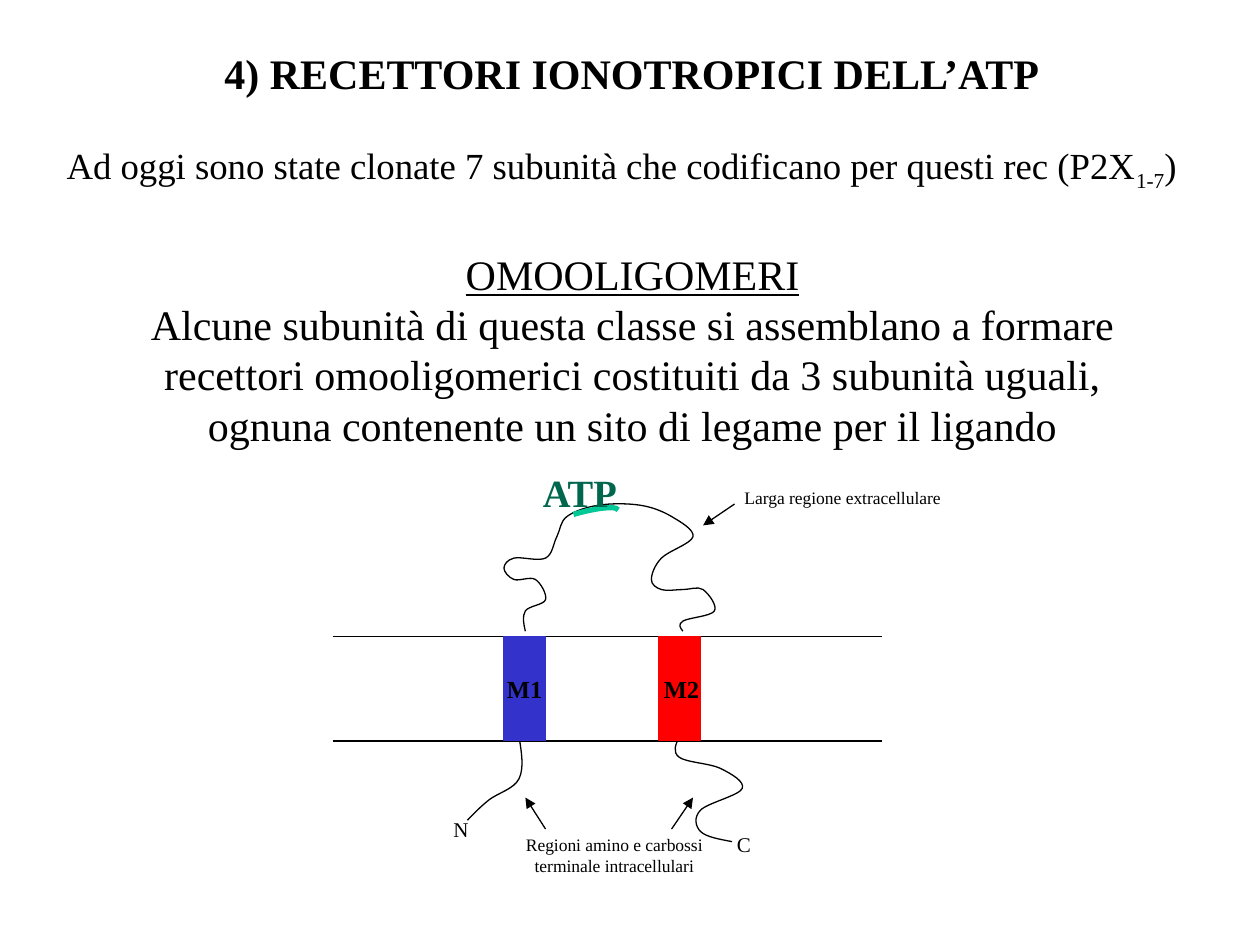
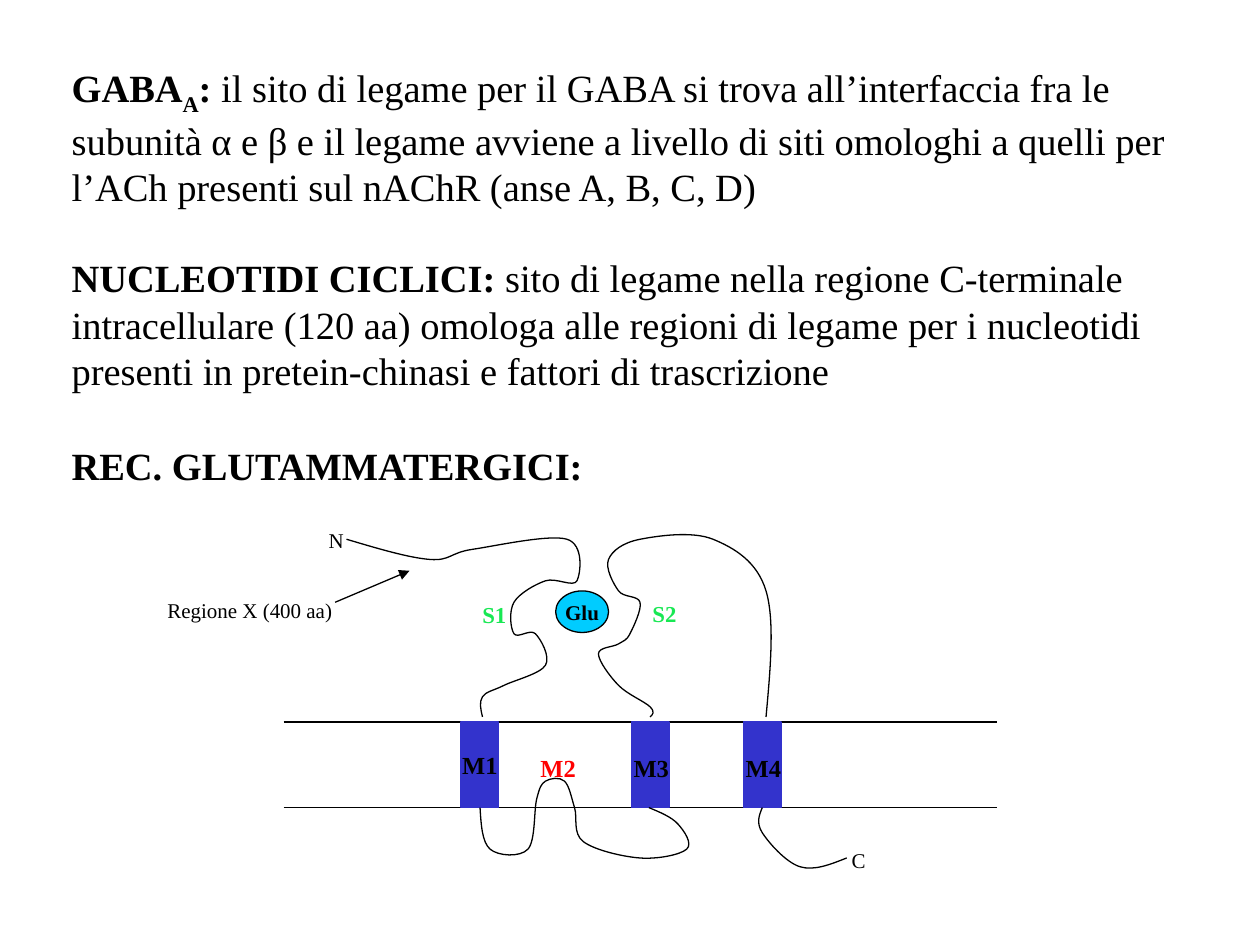
from dataclasses import dataclass

from lxml.etree import SubElement
from pptx import Presentation
from pptx.dml.color import RGBColor as Rgb
from pptx.enum.shapes import MSO_CONNECTOR as Link, MSO_SHAPE as Kind
from pptx.enum.text import MSO_ANCHOR as Anchor, MSO_AUTO_SIZE as Fit, PP_ALIGN as Align
from pptx.oxml.ns import qn
from pptx.util import Inches, Pt


@dataclass(frozen=True)
class Theme:
    font: str = "Times New Roman"
    ink: str = "000000"
    blue: str = "3333CC"
    red: str = "FF0000"
    cyan: str = "00CCFF"
    lime: str = "18E853"
    pine: str = "00664D"
    mint: str = "00C896"
    head: int = 24
    body: int = 22
    lead: int = 21
    helix: int = 14
    site: int = 13
    mark: int = 12
    note: int = 10
    thin: float = 0.75
    thick: float = 3


T = Theme()


# Shared text and line styling
def style(run, size, color=T.ink, bold=False, under=False, sub=False):
    font = run.font
    font.name, font.size, font.bold = T.font, Pt(size), bold
    font.underline = under
    font.color.rgb = Rgb.from_string(color)
    if sub:
        run._r.get_or_add_rPr().set("baseline", "-25000")


def write(frame, text, size, color=T.ink, bold=False, align=Align.LEFT, wrap=False):
    frame.text = text
    frame.word_wrap = wrap
    for para in frame.paragraphs:
        para.alignment = align
        for run in para.runs:
            style(run, size, color, bold)


def add_runs(para, parts, size):
    for text, look in parts:
        run = para.add_run()
        run.text = text
        style(run, size, **look)


def stroke(shape, color=T.ink, width=T.thin):
    shape.line.color.rgb = Rgb.from_string(color)
    shape.line.width = Pt(width)


def place(shape, x, y, w, h):
    shape.left, shape.top = Inches(x), Inches(y)
    shape.width, shape.height = Inches(w), Inches(h)


def bezier(knots):
    """Control and end points of a smooth curve through the knots."""
    last = len(knots) - 1
    slope = [tuple((b - a) / 6 for a, b in zip(knots[i - 1], knots[i + 1]))
             for i in range(1, last)]
    points = []
    for i in range(last):
        (ax, ay), (bx, by) = knots[i], knots[i + 1]
        if i > 0:
            out = ax + slope[i - 1][0], ay + slope[i - 1][1]
        if i + 1 < last:
            into = bx - slope[i][0], by - slope[i][1]
        if i == 0:
            out = (ax + into[0]) / 2, (ay + into[1]) / 2
        if i + 1 == last:
            into = (out[0] + bx) / 2, (out[1] + by) / 2
        points += [out, into, (bx, by)]
    return points


class Pane:
    """Draws parts relative to the corner of its box."""

    def __init__(self, slide, x=0, y=0):
        self.shapes, self.x, self.y = slide.shapes, x, y

    def spot(self, x, y):
        return Inches(self.x + x), Inches(self.y + y)

    def label(self, text, x, y, w, h, size, **look):
        box = self.shapes.add_textbox(*self.spot(x, y), Inches(w), Inches(h))
        write(box.text_frame, text, size, **look)
        box.text_frame.auto_size = Fit.SHAPE_TO_FIT_TEXT
        return box

    def shape(self, kind, x, y, w, h, fill=None, line=T.ink, width=T.thin):
        item = self.shapes.add_shape(kind, *self.spot(x, y), Inches(w), Inches(h))
        item.shadow.inherit = False
        stroke(item, line, width)
        if fill:
            item.fill.solid()
            item.fill.fore_color.rgb = Rgb.from_string(fill)
        else:
            item.fill.background()
        return item

    def badge(self, item, text, size):
        write(item.text_frame, text, size, bold=True, align=Align.CENTER)
        item.text_frame.vertical_anchor = Anchor.MIDDLE

    def line(self, start, end, arrow=False):
        link = self.shapes.add_connector(Link.STRAIGHT, *self.spot(*start), *self.spot(*end))
        stroke(link)
        if arrow:
            SubElement(link.line._get_or_add_ln(), qn("a:tailEnd"), type="triangle")
        SubElement(link._element.spPr, qn("a:effectLst"))

    def curve(self, *knots):
        pen = self.shapes.build_freeform(*self.spot(*knots[0]))
        pen.add_line_segments([self.spot(*p) for p in bezier(knots)], close=False)
        item = pen.convert_to_shape()
        item.shadow.inherit = False
        item.fill.background()
        stroke(item)
        # Turn each three points into one cubic segment
        steps = item._element.findall(".//" + qn("a:lnTo"))
        for i in range(0, len(steps), 3):
            cubic = SubElement(steps[i].getparent(), qn("a:cubicBezTo"))
            for step in steps[i:i + 3]:
                cubic.append(step[0])
                step.getparent().remove(step)

    def bilayer(self, left, right, top, depth):
        for y in (top, top + depth):
            self.line((left, y), (right, y))


# Slide 1: heading and text
def atp_text(slide):
    title = slide.shapes.title
    place(title, 1.65, 0.33, 6.73, 0.5)
    write(title.text_frame, "4) RECETTORI IONOTROPICI DELL’ATP", T.head,
          bold=True, align=Align.CENTER)
    title.text_frame.vertical_anchor = Anchor.TOP
    title.text_frame.auto_size = Fit.SHAPE_TO_FIT_TEXT

    pane = Pane(slide)
    lead = pane.label("", 0.43, 1.08, 9.14, 0.45, T.lead, wrap=True)
    add_runs(lead.text_frame.paragraphs[0], [
        ("Ad oggi sono state clonate 7 subunità che codificano per questi rec (P2X", {}),
        ("1-7", {"sub": True}), (")", {})], T.lead)

    body = pane.label(
        "OMOOLIGOMERI\n"
        "Alcune subunità di questa classe si assemblano a formare\n"
        "recettori omooligomerici costituiti da 3 subunità uguali,\n"
        "ognuna contenente un sito di legame per il ligando",
        1.06, 1.92, 7.92, 1.72, T.head, align=Align.CENTER)
    body.text_frame.paragraphs[0].runs[0].font.underline = True


# Slide 1: receptor with two helices
def atp_map(slide, x, y):
    pane = Pane(slide, x, y)
    top, depth = 2.05, 0.83
    # Intracellular tails
    pane.curve((3.39, 2.85), (3.39, 3.01), (3.72, 3.1), (3.89, 3.26),
               (3.56, 3.43), (3.56, 3.6), (3.81, 3.68))
    pane.curve((2.12, 2.85), (2.12, 3.18), (1.88, 3.35), (1.71, 3.51))
    # Membrane and helices
    pane.bilayer(0.64, 5, top, depth)
    first = pane.shape(Kind.RECTANGLE, 2, top, 0.33, depth, T.blue, T.blue)
    pane.badge(first, "M1", T.helix)
    pane.shape(Kind.RECTANGLE, 3.23, top, 0.33, depth, T.red, T.red)
    pane.label("M2", 3.17, 2.3, 0.48, 0.33, T.helix, bold=True)
    pane.label("N", 1.5, 3.43, 0.32, 0.3, T.mark)
    pane.label("C", 3.75, 3.55, 0.31, 0.3, T.mark)
    # Extracellular loop
    pane.curve((2.17, 2.01), (2.17, 1.85), (2.33, 1.76), (2.25, 1.6), (2.08, 1.6),
               (2, 1.51), (2.08, 1.43), (2.33, 1.43), (2.42, 1.26), (2.5, 1.1),
               (2.75, 1.01), (3.08, 1.01), (3.33, 1.1), (3.5, 1.26), (3.25, 1.43),
               (3.17, 1.6), (3.25, 1.68), (3.42, 1.68), (3.58, 1.68), (3.67, 1.85),
               (3.42, 1.93), (3.42, 2.01))
    # Notes with arrows
    pane.line((3.83, 1), (3.58, 1.17), arrow=True)
    pane.label("Larga regione extracellulare", 3.81, 0.82, 1.78, 0.27, T.note)
    for start, end in ((2.33, 2.17), (3.33, 3.5)):
        pane.line((start, 3.58), (end, 3.33), arrow=True)
    pane.label("Regioni amino e carbossi\nterminale intracellulari",
               2.07, 3.57, 1.61, 0.43, T.note, align=Align.CENTER)
    # Ligand site
    site = pane.shape(Kind.ARC, 2.22, 1.08, 0.7, 0.13, line=T.mint, width=T.thick)
    site.rotation = 343.8
    pane.label("ATP", 2.21, 0.67, 0.8, 0.47, T.body, color=T.pine, bold=True)


# Slide 2: three receptor families
def site_text(slide):
    bold = {"bold": True}
    paras = [
        (0, [("GABA", bold), ("A", {"bold": True, "sub": True}), (": ", bold),
             ("il sito di legame per il GABA si trova all’interfaccia fra le subunità "
              "α e β e il legame avviene a livello di siti omologhi a quelli per "
              "l’ACh presenti sul nAChR (anse A, B, C, D)", {})]),
        (26, [("NUCLEOTIDI CICLICI: ", bold),
              ("sito di legame nella regione C-terminale intracellulare (120 aa) "
               "omologa alle regioni di legame per i nucleotidi presenti in "
               "pretein-chinasi e fattori di trascrizione", {})]),
        (28, [("REC. GLUTAMMATERGICI:", bold)]),
    ]
    frame = Pane(slide).label("", 0.47, 0.46, 9.02, 3.43, T.body, wrap=True).text_frame
    for i, (gap, parts) in enumerate(paras):
        para = frame.add_paragraph() if i else frame.paragraphs[0]
        para.space_before = Pt(gap)
        add_runs(para, parts, T.body)


# Slide 2: glutamate receptor
def glu_map(slide, x, y):
    pane = Pane(slide, x, y)
    top, depth = 1.73, 0.68
    # Membrane and helices
    pane.bilayer(1.25, 6.91, top, depth)
    first, *_ = [pane.shape(Kind.RECTANGLE, left, top, 0.3, depth, T.blue, T.blue)
                 for left in (2.66, 4.01, 4.9)]
    pane.badge(first, "M1", T.helix)
    for name, left, color in (("M3", 3.93, T.ink), ("M2", 3.19, T.red), ("M4", 4.82, T.ink)):
        pane.label(name, left, 1.93, 0.48, 0.33, T.helix, color=color, bold=True)
    # Intracellular loop and tail
    pane.curve((2.81, 2.41), (2.89, 2.74), (3.19, 2.74), (3.26, 2.34), (3.33, 2.2),
               (3.48, 2.2), (3.56, 2.41), (3.63, 2.68), (4.08, 2.81), (4.45, 2.74),
               (4.38, 2.54), (4.15, 2.41))
    pane.curve((5.05, 2.41), (5.05, 2.61), (5.35, 2.88), (5.72, 2.81))
    # Extracellular lobes
    pane.curve((2.83, 1.69), (2.83, 1.53), (3, 1.44), (3.33, 1.28), (3.25, 1.03),
               (3.08, 1.03), (3.08, 0.78), (3.33, 0.61), (3.58, 0.61), (3.5, 0.28),
               (2.75, 0.36), (2.41, 0.44), (1.75, 0.28))
    pane.curve((4.16, 1.69), (4.16, 1.61), (3.91, 1.44), (3.75, 1.19), (3.91, 1.11),
               (4, 1.03), (4.08, 0.78), (3.91, 0.69), (3.83, 0.44), (4.08, 0.28),
               (4.66, 0.28), (5.08, 0.69), (5.08, 1.69))
    # Ligand and its sites
    for name, left, high in (("S1", 2.73, 0.72), ("S2", 4.08, 0.71)):
        pane.label(name, left, high, 0.39, 0.32, T.site, color=T.lime, bold=True)
    pane.badge(pane.shape(Kind.OVAL, 3.41, 0.69, 0.42, 0.33, T.cyan), "Glu", T.mark)
    # Ends and note
    pane.label("N", 1.51, 0.14, 0.32, 0.3, T.mark)
    pane.label("C", 5.66, 2.68, 0.31, 0.3, T.mark)
    pane.line((1.66, 0.78), (2.25, 0.53), arrow=True)
    pane.label("Regione X (400 aa)", 0.23, 0.69, 1.51, 0.3, T.mark)


def main():
    deck = Presentation()
    deck.slide_width, deck.slide_height = Inches(10), Inches(7.5)
    titled, blank = deck.slide_layouts[5], deck.slide_layouts[6]

    slide = deck.slides.add_slide(titled)
    atp_text(slide)
    atp_map(slide, 2, 3)

    slide = deck.slides.add_slide(blank)
    site_text(slide)
    glu_map(slide, 1, 4)

    deck.save("out.pptx")


if __name__ == "__main__":
    main()
